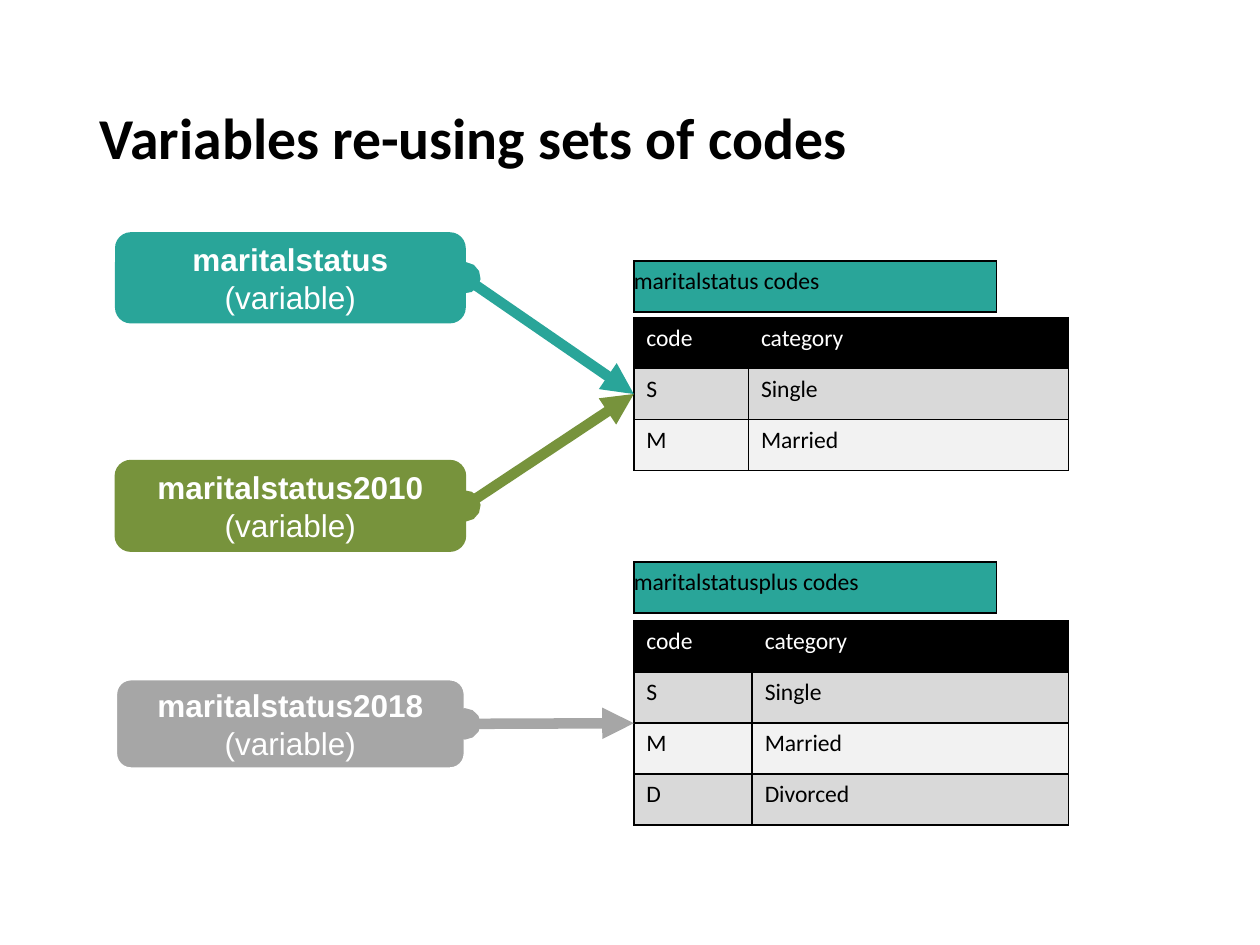
from dataclasses import dataclass

from lxml.etree import SubElement
from pptx import Presentation
from pptx.dml.color import RGBColor
from pptx.enum.shapes import MSO_CONNECTOR, MSO_SHAPE
from pptx.enum.text import MSO_ANCHOR, MSO_AUTO_SIZE, PP_ALIGN
from pptx.oxml.ns import qn
from pptx.util import Inches, Pt

TEAL = RGBColor(0x29, 0xA5, 0x99)
GREEN = RGBColor(0x77, 0x93, 0x3C)
GRAY = RGBColor(0xA6, 0xA6, 0xA6)
BLACK = RGBColor(0, 0, 0)
WHITE = RGBColor(0xFF, 0xFF, 0xFF)
BANDS = (RGBColor(0xD9, 0xD9, 0xD9), RGBColor(0xF2, 0xF2, 0xF2))

BOX_LEFT, BOX_WIDTH, BOX_HEIGHT = 0.92, 2.77, 0.71
TABLE_LEFT, CAPTION_WIDTH = 5.03, 2.88
ROW_HEIGHT = 0.405


@dataclass
class Variable:
    name: str
    top: float
    color: RGBColor
    line_color: RGBColor
    line_width: float
    target: float  # height at which the arrow meets its table


@dataclass
class CodeList:
    caption: str
    caption_top: float
    top: float
    columns: tuple[float, float]
    codes: list[tuple[str, str]]

    @property
    def middle(self) -> float:
        return self.top + ROW_HEIGHT * (len(self.codes) + 1) / 2


def style_cell(cell, text: str, fill: RGBColor, color: RGBColor, margin_left: float) -> None:
    properties = cell._tc.get_or_add_tcPr()
    for side in ("a:lnL", "a:lnR", "a:lnT", "a:lnB"):
        border = SubElement(properties, qn(side), w=str(Pt(1)))
        SubElement(SubElement(border, qn("a:solidFill")), qn("a:srgbClr"), val=str(BLACK))
    cell.fill.solid()
    cell.fill.fore_color.rgb = fill
    cell.margin_left = Inches(margin_left)
    cell.text = text
    font = cell.text_frame.paragraphs[0].font
    font.name, font.size, font.bold = "Calibri", Pt(13.5), False
    font.color.rgb = color


def add_grid(slide, top: float, columns: tuple[float, ...], row_count: int):
    table = slide.shapes.add_table(
        row_count, len(columns), Inches(TABLE_LEFT), Inches(top),
        Inches(sum(columns)), Inches(ROW_HEIGHT * row_count)).table
    for column, width in zip(table.columns, columns):
        column.width = Inches(width)
    return table


def add_code_list(slide, code_list: CodeList) -> None:
    caption = add_grid(slide, code_list.caption_top, (CAPTION_WIDTH,), 1)
    style_cell(caption.cell(0, 0), code_list.caption, TEAL, BLACK, 0)

    rows = [("code", "category"), *code_list.codes]
    table = add_grid(slide, code_list.top, code_list.columns, len(rows))
    for row, texts in enumerate(rows):
        fill = BANDS[(row - 1) % 2] if row else BLACK
        color = BLACK if row else WHITE
        for column, text in enumerate(texts):
            style_cell(table.cell(row, column), text, fill, color, 0.1)


def add_variable(slide, variable: Variable):
    box = slide.shapes.add_shape(
        MSO_SHAPE.ROUNDED_RECTANGLE, Inches(BOX_LEFT), Inches(variable.top),
        Inches(BOX_WIDTH), Inches(BOX_HEIGHT))
    box.shadow.inherit = False
    box.fill.solid()
    box.fill.fore_color.rgb = variable.color
    box.line.color.rgb = variable.line_color
    box.line.width = Pt(variable.line_width)

    text_frame = box.text_frame
    text_frame.word_wrap = True
    text_frame.vertical_anchor = MSO_ANCHOR.MIDDLE
    paragraph = text_frame.paragraphs[0]
    paragraph.alignment = PP_ALIGN.CENTER
    paragraph.font.name, paragraph.font.size = "Arial", Pt(18)
    paragraph.font.color.rgb = WHITE
    name = paragraph.add_run()
    name.text = variable.name
    name.font.bold = True
    paragraph.add_line_break()
    paragraph.add_run().text = "(variable)"
    return box


def add_arrow(slide, box, variable: Variable) -> None:
    arrow = slide.shapes.add_connector(
        MSO_CONNECTOR.STRAIGHT, Inches(BOX_LEFT + BOX_WIDTH),
        Inches(variable.top + BOX_HEIGHT / 2), Inches(TABLE_LEFT), Inches(variable.target))
    arrow.begin_connect(box, 3)
    arrow.line.color.rgb = variable.color
    arrow.line.width = Pt(6)
    line = arrow.line._get_or_add_ln()
    SubElement(line, qn("a:headEnd"), type="oval")
    SubElement(line, qn("a:tailEnd"), type="triangle")
    SubElement(arrow._element.spPr, qn("a:effectLst"))


def add_title(slide, text: str) -> None:
    title = slide.shapes.title
    title.left, title.top = Inches(0.69), Inches(0.39)
    title.width, title.height = Inches(8.66), Inches(1.45)
    text_frame = title.text_frame
    text_frame.text = text
    text_frame.auto_size = MSO_AUTO_SIZE.NONE
    text_frame.vertical_anchor = MSO_ANCHOR.MIDDLE
    paragraph = text_frame.paragraphs[0]
    paragraph.alignment = PP_ALIGN.LEFT
    paragraph.line_spacing = 0.9
    paragraph.font.name, paragraph.font.size = "Calibri", Pt(33)
    paragraph.font.bold = True
    paragraph.font.color.rgb = BLACK


def main() -> None:
    presentation = Presentation()
    presentation.slide_width, presentation.slide_height = Inches(10), Inches(7.5)
    slide = presentation.slides.add_slide(presentation.slide_layouts[5])
    add_title(slide, "Variables re-using sets of codes")

    # Code lists on the right
    codes = [("S", "Single"), ("M", "Married")]
    basic = CodeList("maritalstatus codes", 2.07, 2.52, (0.91, 2.54), codes)
    plus = CodeList("maritalstatusplus codes", 4.46, 4.93, (0.94, 2.51),
                    [*codes, ("D", "Divorced")])
    for code_list in (basic, plus):
        add_code_list(slide, code_list)

    # Variables on the left, each pointing at the codes it uses
    variables = [
        Variable("maritalstatus", 1.85, TEAL, TEAL, 1, basic.middle),
        Variable("maritalstatus2010", 3.66, GREEN, GREEN, 1.5, basic.middle),
        Variable("maritalstatus2018", 5.39, GRAY, WHITE, 1.5, plus.middle),
    ]
    for variable in variables:
        box = add_variable(slide, variable)
        add_arrow(slide, box, variable)

    presentation.save("out.pptx")


if __name__ == "__main__":
    main()
